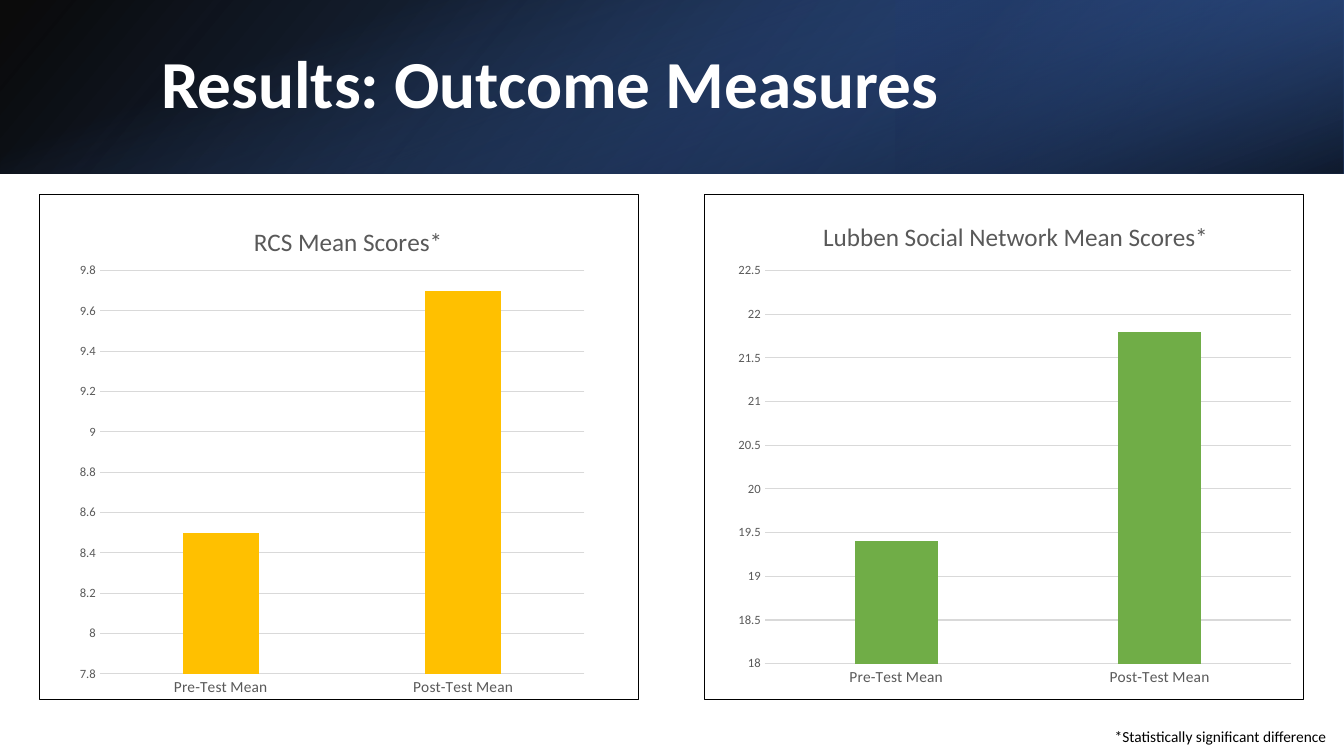
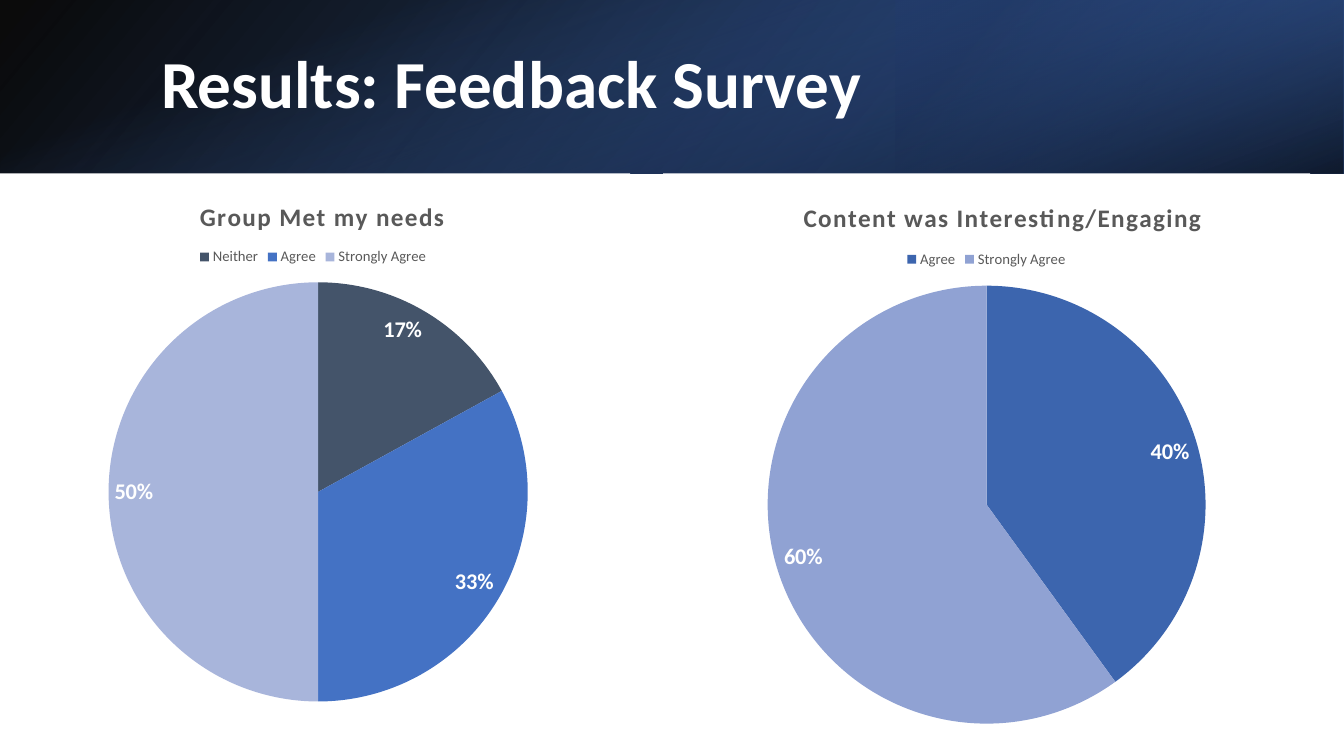
"""Build two results slides with bar charts and pie charts."""
from lxml import etree
from pptx import Presentation
from pptx import util as u
from pptx.chart.data import CategoryChartData
from pptx.dml.color import RGBColor
from pptx.enum import chart as ch, shapes, text
from pptx.oxml import parse_xml
from pptx.oxml.ns import nsdecls, qn

Cm, Pt = u.Cm, u.Pt
W, H, BAND = 33.87, 19.05, 4.37
FONT = "Calibri"
WHITE = RGBColor(0xFF, 0xFF, 0xFF)
BLACK = RGBColor(0, 0, 0)
GREY = RGBColor(0x59, 0x59, 0x59)
RULE = RGBColor(0xD9, 0xD9, 0xD9)
NAVY = RGBColor(0x20, 0x38, 0x64)
DEEP = RGBColor(0x2F, 0x55, 0x97)
BLUE = RGBColor(0x44, 0x72, 0xC4)
GOLD = RGBColor(0xFF, 0xC0, 0x00)
GREEN = RGBColor(0x70, 0xAD, 0x47)
SLATE = RGBColor(0x44, 0x54, 0x6A)
PALE = RGBColor(0xA8, 0xB5, 0xDB)
ROYAL = RGBColor(0x3C, 0x65, 0xAE)
PERIWINKLE = RGBColor(0x90, 0xA2, 0xD3)
TITLE = dict(size=Pt(48), bold=True, name=FONT)
NOTE = dict(size=Pt(11), name=FONT)
CHART_TITLE = dict(size=Pt(18), name=FONT)
LABEL = dict(size=Pt(16), bold=True, name=FONT)


def style(obj, values, color=None):
    for key, value in values.items():
        setattr(obj, key, value)
    if color is not None:
        obj.color.rgb = color


def add_gradient(s, box, stops, angle, rotation=0, flip=False):
    sp = s.shapes.add_shape(shapes.MSO_SHAPE.RECTANGLE, *map(Cm, box))
    sp.shadow.inherit = False
    sp.line.fill.background()
    sp.rotation = rotation
    spPr = sp._element.spPr
    if flip:
        spPr.xfrm.set("flipH", "1")
    marks = "".join(
        f'<a:gs pos="{pos * 1000}"><a:srgbClr val="{color}">'
        f'<a:alpha val="{alpha * 1000}"/></a:srgbClr></a:gs>'
        for pos, color, alpha in stops)
    spPr.find(qn("a:prstGeom")).addnext(parse_xml(
        f'<a:gradFill {nsdecls("a")} rotWithShape="1"><a:gsLst>{marks}</a:gsLst>'
        f'<a:lin ang="{angle * 60000}" scaled="0"/></a:gradFill>'))


def add_text(s, box, words, values, color, anchor=text.MSO_ANCHOR.TOP, spacing=1.0):
    tf = s.shapes.add_textbox(*map(Cm, box)).text_frame
    style(tf, dict(word_wrap=True, vertical_anchor=anchor))
    p = tf.paragraphs[0]
    p.line_spacing = spacing
    r = p.add_run()
    r.text = words
    style(r.font, values, color)


def add_header(prs, title):
    s = prs.slides.add_slide(prs.slide_layouts[6])
    add_gradient(s, (0, 0, W, BAND), [(0, BLACK, 96), (100, DEEP, 100)], 140, flip=True)
    add_gradient(s, (W * 2 / 3, 0, W / 3, BAND), [(19, NAVY, 68), (100, BLUE, 79)],
                 320, 180, True)
    add_gradient(s, ((W - BAND) / 2, (BAND - W) / 2, BAND, W),
                 [(23, BLUE, 0), (99, BLACK, 74)], 340, 90)
    add_text(s, (3.81, 0.97, 27.89, 2.44), title, TITLE, WHITE,
             text.MSO_ANCHOR.MIDDLE, 0.9)
    return s


def place(element, index, layout):
    for old in element.findall(qn("c:layout")):
        element.remove(old)
    node = parse_xml(f'<c:layout {nsdecls("c")}><c:manualLayout/></c:layout>')
    values = dict(xMode="edge", yMode="edge", **dict(zip("xywh", layout)))
    if index == 0:
        values = dict(layoutTarget="inner", **values)
    for tag, value in values.items():
        etree.SubElement(node[0], qn(f"c:{tag}")).set("val", str(value))
    element.insert(index, node)


def add_chart(s, kind, box, title, title_at, plot_at, data, border=None, bold=False):
    cd = CategoryChartData()
    cd.categories = list(data)
    cd.add_series("Series 1", list(data.values()))
    chart = s.shapes.add_chart(kind, *map(Cm, box), cd).chart
    style(chart.font, dict(size=Pt(10), name=FONT), BLACK)
    tf = chart.chart_title.text_frame
    r = tf.paragraphs[0].add_run()
    r.text = title
    style(r.font, dict(CHART_TITLE, bold=bold), GREY)
    if bold:
        r.font._element.set("spc", "100")
    chart.chart_title.include_in_layout = False
    root = chart._chartSpace
    place(root.xpath("c:chart/c:title")[0], 1, title_at)
    place(root.xpath("c:chart/c:plotArea")[0], 0, plot_at)
    fill = f'<a:solidFill><a:srgbClr val="{border}"/></a:solidFill>' if border else "<a:noFill/>"
    root.find(qn("c:chart")).addnext(parse_xml(
        f'<c:spPr {nsdecls("c", "a")}><a:solidFill><a:srgbClr val="{WHITE}"/></a:solidFill>'
        f'<a:ln w="9525">{fill}</a:ln></c:spPr>'))
    return chart


def add_bars(s, left, title, title_at, plot_at, means, scale, color):
    data = dict(zip(("Pre-Test Mean", "Post-Test Mean"), means))
    chart = add_chart(s, ch.XL_CHART_TYPE.COLUMN_CLUSTERED, (left, 4.9, 15.11, 12.73),
                      title, title_at, plot_at, data, BLACK)
    chart.has_legend = False
    plot = chart.plots[0]
    style(plot, dict(gap_width=219, overlap=-27, vary_by_categories=False))
    fill = plot.series[0].format.fill
    fill.solid()
    fill.fore_color.rgb = color
    for axis, size in ((chart.category_axis, 11), (chart.value_axis, 9)):
        axis.major_tick_mark = ch.XL_TICK_MARK.NONE
        style(axis.tick_labels.font, dict(size=Pt(size), name=FONT), GREY)
    axis = chart.value_axis
    style(axis, dict(zip(("minimum_scale", "maximum_scale", "major_unit"), scale)))
    style(axis.tick_labels, dict(number_format="General", number_format_is_linked=False))
    axis.format.line.fill.background()
    for line in (chart.category_axis.format.line, axis.major_gridlines.format.line):
        style(line, dict(width=Pt(0.75)), RULE)


def add_pie(s, box, title, title_at, legend_at, plot_at, data, colors):
    chart = add_chart(s, ch.XL_CHART_TYPE.PIE, box, title, title_at, plot_at,
                      data, bold=True)
    chart.has_legend = True
    style(chart.legend, dict(position=ch.XL_LEGEND_POSITION.TOP, include_in_layout=False))
    style(chart.legend.font, dict(size=Pt(10.5), name=FONT), GREY)
    place(chart.legend._element, 1, legend_at)
    plot = chart.plots[0]
    plot.vary_by_categories = True
    for i, color in enumerate(colors):
        fill = plot.series[0].points[i].format.fill
        fill.solid()
        fill.fore_color.rgb = color
    plot.has_data_labels = True
    labels = plot.data_labels
    style(labels, dict(show_percentage=True, show_value=False, number_format="0%",
                       number_format_is_linked=False,
                       position=ch.XL_LABEL_POSITION.INSIDE_END))
    style(labels.font, LABEL, WHITE)


def main():
    prs = Presentation()
    style(prs, dict(slide_width=Cm(W), slide_height=Cm(H)))

    s = add_header(prs, "Results: Outcome Measures")
    add_bars(s, 0.99, "RCS Mean Scores*", (0.35, 0.05), (0.1, 0.15, 0.81, 0.8),
             (8.5, 9.7), (7.8, 9.8, 0.2), GOLD)
    add_bars(s, 17.75, "Lubben Social Network Mean Scores*", (0.19, 0.04),
             (0.1, 0.15, 0.88, 0.78), (19.4, 21.8), (18, 22.5, 0.5), GREEN)
    add_text(s, (27.84, 18.21, W - 27.84, 0.74), "*Statistically significant difference",
             NOTE, BLACK)

    s = add_header(prs, "Results: Feedback Survey")
    add_pie(s, (0, BAND, 15.88, 13.72), "Group Met my needs", (0.31, 0.04), (0.31, 0.13),
            (0.17, 0.2, 0.67, 0.77), {"Neither": 17, "Agree": 33, "Strongly Agree": 50},
            (SLATE, BLUE, PALE))
    add_pie(s, (16.71, BAND, 16.31, 14.15), "Content was Interesting/Engaging",
            (0.21, 0.04), (0.37, 0.13), (0.16, 0.2, 0.68, 0.78),
            {"Agree": 40, "Strongly Agree": 60}, (ROYAL, PERIWINKLE))
    prs.save("out.pptx")


if __name__ == "__main__":
    main()
